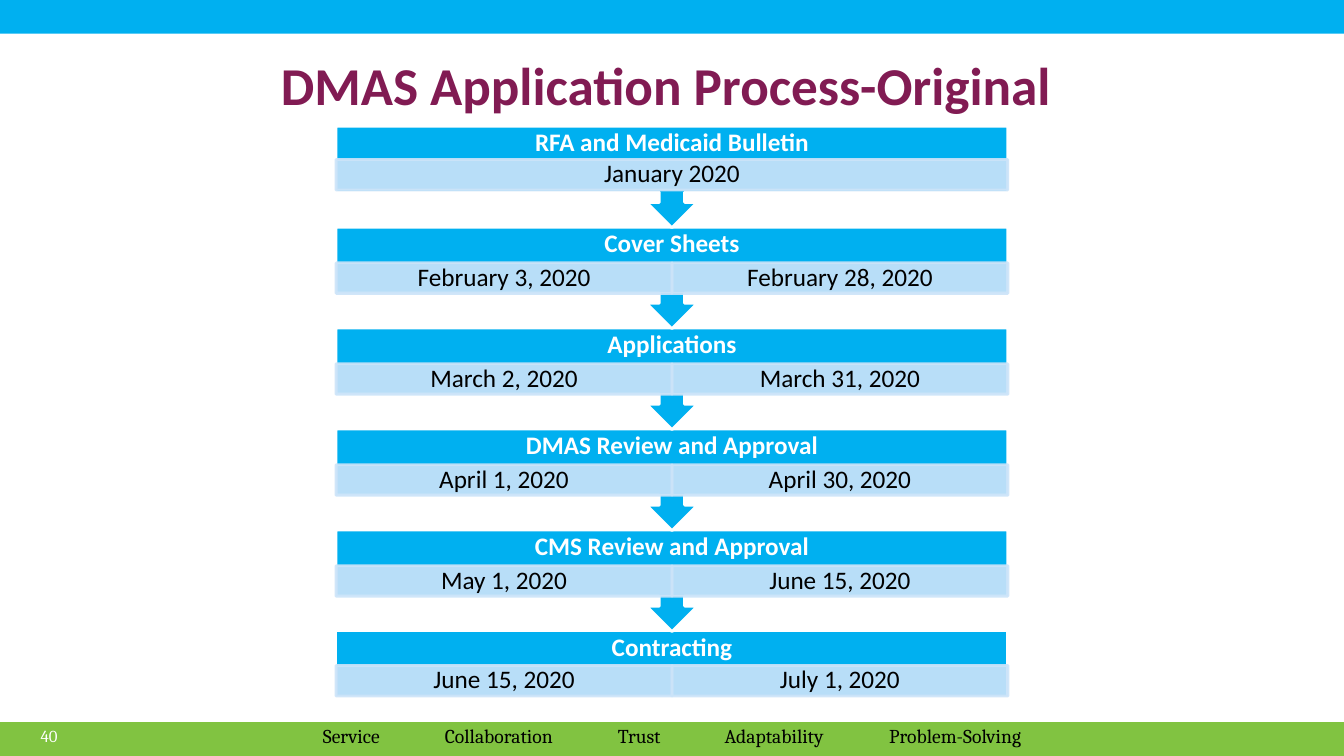
from dataclasses import dataclass

from lxml.etree import SubElement
from pptx import Presentation
from pptx.dml.color import RGBColor
from pptx.enum.shapes import MSO_SHAPE as Preset
from pptx.enum.text import MSO_ANCHOR as Anchor, MSO_AUTO_SIZE as AutoSize, PP_ALIGN as Align
from pptx.oxml.ns import qn
from pptx.util import Cm, Pt


@dataclass(frozen=True)
class Theme:
    blue: str = "00B0F0"
    green: str = "81C341"
    plum: str = "811B53"
    pale: str = "CCE4F9"
    white: str = "FFFFFF"
    black: str = "000000"
    body_font: str = "Calibri"
    footer_font: str = "Cambria"
    title_size: int = 38
    step_size: int = 18
    value_size: int = 14
    number_size: int = 12


@dataclass(frozen=True)
class Area:
    left: float
    top: float
    width: float
    height: float

    def lengths(self):
        return Cm(self.left), Cm(self.top), Cm(self.width), Cm(self.height)


@dataclass(frozen=True)
class Step:
    name: str
    dates: tuple[str, ...]
    date_offset: float = 0.9


@dataclass(frozen=True)
class Value:
    word: str
    position: float


THEME = Theme()
PAGE_WIDTH, PAGE_HEIGHT = 33.87, 19.05
BAR_HEIGHT = 0.85
FLOW_LEFT, FLOW_TOP, FLOW_WIDTH = 8.47, 3.18, 16.93
STEP_PITCH, CALLOUT_HEIGHT, LAST_HEIGHT, DATE_HEIGHT = 2.544, 2.56, 1.67, 0.77

STEPS = [
    Step("RFA and Medicaid Bulletin", ("January 2020",), 0.84),
    Step("Cover Sheets", ("February 3, 2020", "February 28, 2020")),
    Step("Applications", ("March 2, 2020", "March 31, 2020")),
    Step("DMAS Review and Approval", ("April 1, 2020", "April 30, 2020")),
    Step("CMS Review and Approval", ("May 1, 2020", "June 15, 2020")),
    Step("Contracting", ("June 15, 2020", "July 1, 2020"), 0.87),
]
VALUES = [
    Value("Service", 0),
    Value("Collaboration", 3.07),
    Value("Trust", 7.43),
    Value("Adaptability", 10.12),
    Value("Problem-Solving", 14.27),
]


def set_frame(frame, anchor, left: float = 0, top: float = 0, right: float = 0) -> None:
    frame.word_wrap = True
    frame.auto_size = AutoSize.NONE
    frame.vertical_anchor = anchor
    frame.margin_left, frame.margin_right = Cm(left), Cm(right)
    frame.margin_top, frame.margin_bottom = Cm(top), Cm(0)


def add_span(para, text: str, size: int, color: str, font: str = THEME.body_font,
             bold: bool = False) -> None:
    span = para.add_run()
    span.text = text
    span.font.name, span.font.size, span.font.bold = font, Pt(size), bold
    span.font.color.rgb = RGBColor.from_string(color)


def add_block(page, preset, area: Area, fill: str, line: str | None = None,
              opacity: int | None = None):
    block = page.shapes.add_shape(preset, *area.lengths())
    block.shadow.inherit = False
    block.fill.solid()
    block.fill.fore_color.rgb = RGBColor.from_string(fill)
    if line:
        block.line.color.rgb = RGBColor.from_string(line)
        block.line.width = Pt(2)
    else:
        block.line.fill.background()
    if opacity is not None:
        for color in list(block._element.spPr.iter(qn("a:srgbClr"))):
            SubElement(color, qn("a:alpha")).set("val", str(opacity * 1000))
    return block


def add_step(page, step: Step, top: float, last: bool) -> None:
    # Heading, with an arrow to the next step
    preset = Preset.RECTANGLE if last else Preset.DOWN_ARROW_CALLOUT
    height = LAST_HEIGHT if last else CALLOUT_HEIGHT
    heading = add_block(page, preset, Area(FLOW_LEFT, top, FLOW_WIDTH, height),
                        THEME.blue, THEME.white)
    set_frame(heading.text_frame, Anchor.TOP, left=0.36, top=0.1, right=0.36)
    write_step_line(heading, step.name, THEME.white, bold=True)

    # Dates share the width equally
    width = FLOW_WIDTH / len(step.dates)
    for column, date in enumerate(step.dates):
        area = Area(FLOW_LEFT + column * width, top + step.date_offset, width, DATE_HEIGHT)
        cell = add_block(page, Preset.RECTANGLE, area, THEME.pale, THEME.pale, opacity=90)
        set_frame(cell.text_frame, Anchor.MIDDLE, left=0.36, right=0.36)
        write_step_line(cell, date, THEME.black)


def write_step_line(block, text: str, color: str, bold: bool = False) -> None:
    para = block.text_frame.paragraphs[0]
    para.alignment = Align.CENTER
    para.line_spacing = 0.9
    add_span(para, text, THEME.step_size, color, bold=bold)


def add_title(page, text: str) -> None:
    title = page.shapes.title
    title.left, title.top, title.width, title.height = Area(5.51, 1.07, 22.86, 2.11).lengths()
    set_frame(title.text_frame, Anchor.MIDDLE)
    para = title.text_frame.paragraphs[0]
    para.alignment = Align.CENTER
    add_span(para, text, THEME.title_size, THEME.plum, bold=True)


def add_page_number(page, number: str) -> None:
    box = page.shapes.add_textbox(*Area(0.28, 18.03, 1.42, 1.02).lengths())
    set_frame(box.text_frame, Anchor.MIDDLE, right=0.25)
    para = box.text_frame.paragraphs[0]
    para.alignment = Align.RIGHT
    add_span(para, number, THEME.number_size, THEME.white, THEME.footer_font)


def add_values(page, values: list[Value]) -> None:
    box = page.shapes.add_textbox(*Area(8.14, 18.11, 20, 0.86).lengths())
    set_frame(box.text_frame, Anchor.TOP, top=0.13)
    para = box.text_frame.paragraphs[0]
    tabs = SubElement(para._p.get_or_add_pPr(), qn("a:tabLst"))
    for value in values[1:]:
        tab = SubElement(tabs, qn("a:tab"))
        tab.set("pos", str(int(Cm(value.position))))
        tab.set("algn", "l")
    para.alignment = Align.LEFT
    for index, value in enumerate(values):
        text = f"\t{value.word}" if index else value.word
        add_span(para, text, THEME.value_size, THEME.black, THEME.footer_font)


def main() -> None:
    deck = Presentation()
    deck.slide_width, deck.slide_height = Cm(PAGE_WIDTH), Cm(PAGE_HEIGHT)
    page = deck.slides.add_slide(deck.slide_layouts[5])

    # Bars along the top and bottom edges
    for top, color in ((0, THEME.blue), (PAGE_HEIGHT - BAR_HEIGHT, THEME.green)):
        add_block(page, Preset.RECTANGLE, Area(0, top, PAGE_WIDTH, BAR_HEIGHT), color)

    add_title(page, "DMAS Application Process-Original ")

    # Process flow, drawn upwards so each arrow lies over the next heading
    for row, step in reversed(list(enumerate(STEPS))):
        add_step(page, step, FLOW_TOP + row * STEP_PITCH, last=row == len(STEPS) - 1)

    # Footer
    add_page_number(page, "40")
    add_values(page, VALUES)
    deck.save("out.pptx")


if __name__ == "__main__":
    main()
